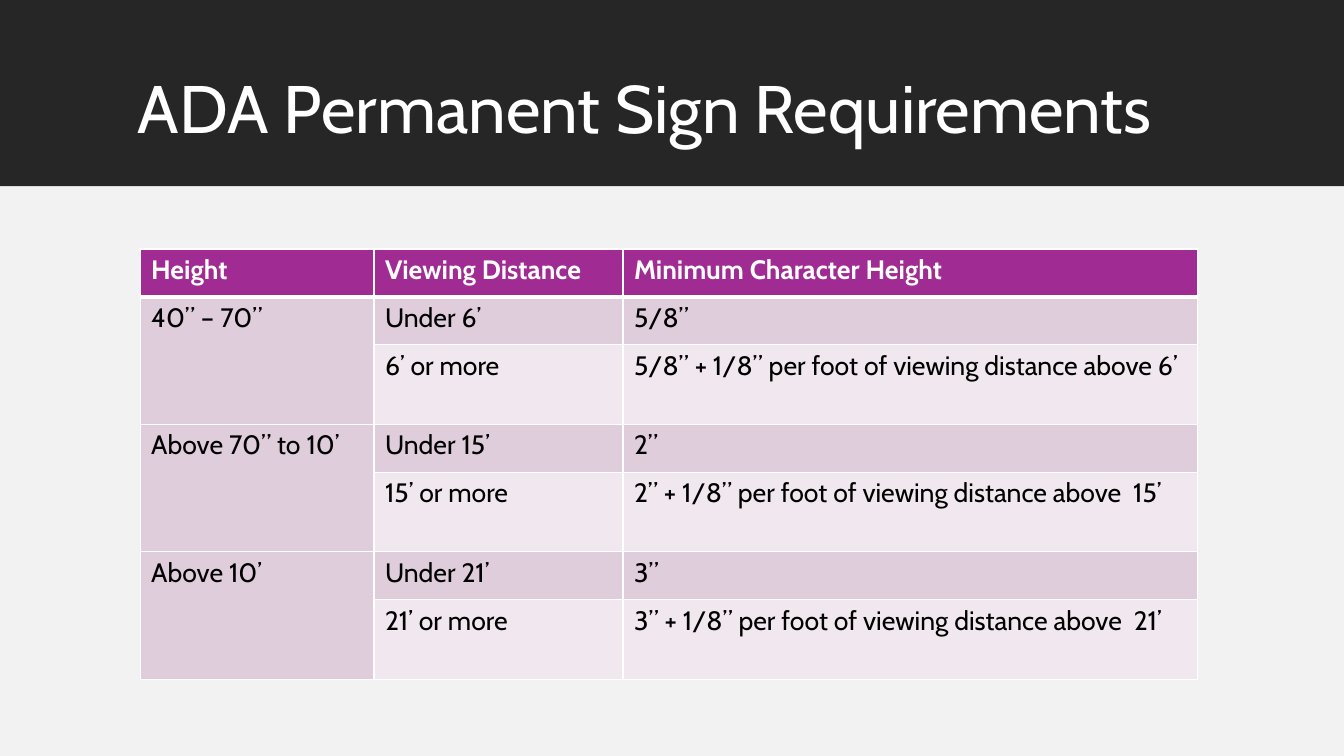
from dataclasses import dataclass

from lxml.etree import SubElement
from pptx import Presentation
from pptx.dml.color import RGBColor as RGB
from pptx.enum.shapes import MSO_SHAPE as SHAPE
from pptx.enum.text import MSO_ANCHOR as ANCHOR
from pptx.oxml.ns import qn
from pptx.util import Inches, Pt


@dataclass(frozen=True)
class Theme:
    font: str = "Cabin"
    title_size: float = 48
    table_size: float = 19
    thin: float = 1
    thick: float = 3
    white: str = "FFFFFF"
    black: str = "000000"
    banner: str = "262626"
    panel: str = "F2F2F2"
    header: str = "A02B93"
    dark_band: str = "DFCDDC"
    light_band: str = "F0E8EE"


@dataclass(frozen=True)
class Box:
    """Place and size in percent of the slide's width and height."""
    left: float
    top: float
    width: float
    height: float


@dataclass(frozen=True)
class HeightRule:
    height: str
    near: str
    near_minimum: str
    far: str
    far_minimum: str


THEME = Theme()
SLIDE_W, SLIDE_H = Inches(13.33), Inches(7.5)

BANNER_H = 24.67
BANNER = Box(0, 0, 100, BANNER_H)
PANEL = Box(0, BANNER_H, 100, 100 - BANNER_H)
TITLE = Box(9.53, 9.33, 81.08, 13.07)

HEADINGS = ("Height", "Viewing Distance", "Minimum Character Height")
RULES = (
    HeightRule("40” – 70”", "Under 6’", "5/8”",
               "6’ or more", "5/8” + 1/8” per foot of viewing distance above 6’"),
    HeightRule("Above 70” to 10’", "Under 15’", "2”",
               "15’ or more", "2” + 1/8” per foot of viewing distance above  15’"),
    HeightRule("Above 10’", "Under 21’", "3”",
               "21’ or more", "3” + 1/8” per foot of viewing distance above  21’"),
)
COLUMN_SHARES = (17.4, 18.53, 42.75)
NEAR_ROW, FAR_ROW = 6.33, 10.55
ROW_SHARES = (NEAR_ROW,) + (NEAR_ROW, FAR_ROW) * len(RULES)
TABLE = Box(10.43, 32.93, sum(COLUMN_SHARES), sum(ROW_SHARES))


def across(share: float) -> int:
    return round(SLIDE_W * share / 100)


def down(share: float) -> int:
    return round(SLIDE_H * share / 100)


def place(box: Box) -> tuple[int, int, int, int]:
    return across(box.left), down(box.top), across(box.width), down(box.height)


def write(tf, text: str, size: float, color: str, bold: bool = False) -> None:
    tf.text = text
    for r in tf.paragraphs[0].runs:
        r.font.name = THEME.font
        r.font.size = Pt(size)
        r.font.bold = bold
        r.font.color.rgb = RGB.from_string(color)


def add_band(slide, box: Box, color: str) -> None:
    sp = slide.shapes.add_shape(SHAPE.RECTANGLE, *place(box))
    sp.shadow.inherit = False
    sp.fill.solid()
    sp.fill.fore_color.rgb = RGB.from_string(color)
    sp.line.fill.background()


def add_title(slide, text: str) -> None:
    tf = slide.shapes.add_textbox(*place(TITLE)).text_frame
    tf.word_wrap = True
    tf.vertical_anchor = ANCHOR.TOP
    write(tf, text, THEME.title_size, THEME.white)
    tf.paragraphs[0].line_spacing = 0.9


def set_borders(cell, top: float, bottom: float) -> None:
    tc_pr = cell._tc.get_or_add_tcPr()
    widths = {"lnL": THEME.thin, "lnR": THEME.thin, "lnT": top, "lnB": bottom}
    for tag, width in widths.items():
        ln = SubElement(tc_pr, qn(f"a:{tag}"), w=str(Pt(width)))
        fill = SubElement(ln, qn("a:solidFill"))
        SubElement(fill, qn("a:srgbClr"), val=THEME.white)


def style_cell(cell, row: int, col: int) -> None:
    """Draw borders before the fill, as the cell's XML order requires."""
    set_borders(cell, top=THEME.thick if row == 1 else THEME.thin,
                bottom=THEME.thick if row == 0 else THEME.thin)
    if row == 0:
        color = THEME.header
    elif col == 0 or row % 2:
        color = THEME.dark_band
    else:
        color = THEME.light_band
    cell.fill.solid()
    cell.fill.fore_color.rgb = RGB.from_string(color)
    cell.margin_left = cell.margin_right = Inches(0.11)
    cell.margin_top = cell.margin_bottom = Inches(0.05)


def add_rules_table(slide) -> None:
    rows = [HEADINGS]
    for rule in RULES:
        rows += [(rule.height, rule.near, rule.near_minimum),
                 ("", rule.far, rule.far_minimum)]
    table = slide.shapes.add_table(len(rows), len(HEADINGS), *place(TABLE)).table
    for column, share in zip(table.columns, COLUMN_SHARES):
        column.width = across(share)
    for i, (texts, share) in enumerate(zip(rows, ROW_SHARES)):
        table.rows[i].height = down(share)
        for j, text in enumerate(texts):
            cell = table.cell(i, j)
            style_cell(cell, i, j)
            write(cell.text_frame, text, THEME.table_size,
                  THEME.black if i else THEME.white, bold=i == 0)
    for i in range(1, len(rows), 2):
        table.cell(i, 0).merge(table.cell(i + 1, 0))


def main() -> None:
    prs = Presentation()
    prs.slide_width, prs.slide_height = SLIDE_W, SLIDE_H
    slide = prs.slides.add_slide(prs.slide_layouts[6])
    add_band(slide, BANNER, THEME.banner)
    add_title(slide, "ADA Permanent Sign Requirements")
    add_band(slide, PANEL, THEME.panel)
    add_rules_table(slide)
    prs.save("out.pptx")


if __name__ == "__main__":
    main()
